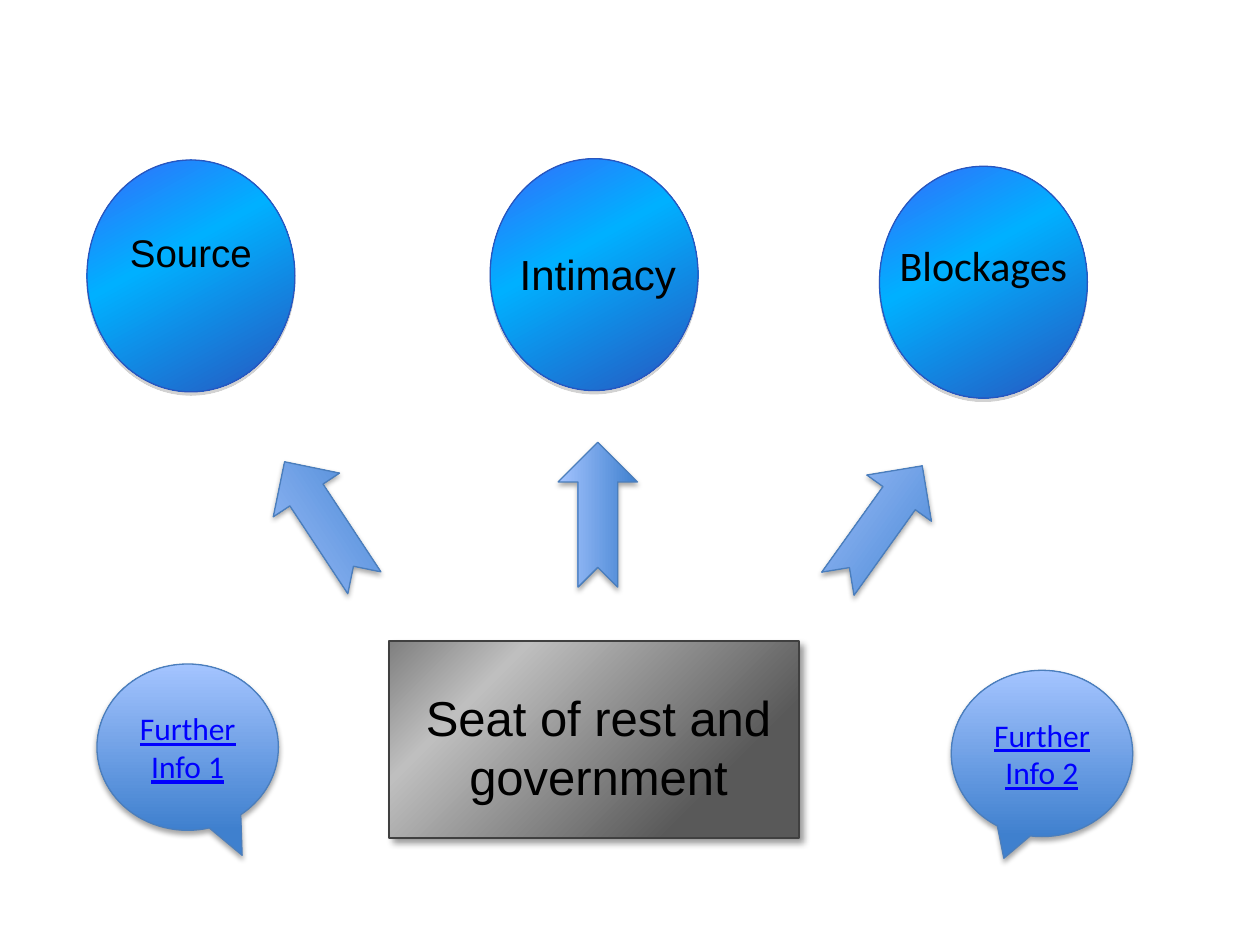
from dataclasses import dataclass

from lxml import etree
from pptx import Presentation
from pptx.dml.color import RGBColor
from pptx.enum.shapes import MSO_SHAPE
from pptx.enum.text import MSO_ANCHOR, PP_ALIGN
from pptx.oxml.ns import qn
from pptx.util import Inches, Pt

RECT = MSO_SHAPE.RECTANGLE
OVAL = MSO_SHAPE.OVAL
ARROW = MSO_SHAPE.NOTCHED_RIGHT_ARROW
BUBBLE = MSO_SHAPE.OVAL_CALLOUT
MIDDLE = MSO_ANCHOR.MIDDLE
CENTER = PP_ALIGN.CENTER


@dataclass(frozen=True)
class Look:
    stops: tuple
    angle: int
    edge: str
    weight: float
    shade: tuple


@dataclass(frozen=True)
class Theme:
    sans: str = "Arial"
    body: str = "Calibri"
    ink: str = "000000"
    link: str = "0000FF"
    title: int = 28
    large: int = 24
    label: int = 22
    small: int = 18
    seat: Look = Look(((22, "595959"), (77, "BFBFBF"), (100, "808080")),
                      225, "404040", 1, ("000000", 40, 4, 3, 45))
    disc: Look = Look(((0, "336FFA"), (2, "336FFA"), (40, "00B0FF"), (100, "2856BF")),
                      61, "2856BF", 0.75, ("808080", 35, 0, 1.8, 90))
    sky: Look = Look(((0, "3F80CE"), (100, "A4C4FF")),
                     270, "4B7EBC", 0.75, ("000000", 35, 3.1, 1.8, 90))


THEME = Theme()


def add_node(parent, tag, **attrs):
    return etree.SubElement(parent, qn(tag), {k: str(v) for k, v in attrs.items()})


def add_color(parent, color):
    return add_node(parent, "a:srgbClr", val=color)


def paint(shape, look):
    shape.fill.background()
    props = shape.fill._xPr
    blank = props.find(qn("a:noFill"))
    grad = add_node(props, "a:gradFill", rotWithShape=1)
    stops = add_node(grad, "a:gsLst")
    for pos, color in look.stops:
        add_color(add_node(stops, "a:gs", pos=pos * 1000), color)
    add_node(grad, "a:lin", ang=look.angle * 60000, scaled=0)
    props.replace(blank, grad)

    shape.line.color.rgb = RGBColor.from_string(look.edge)
    shape.line.width = Pt(look.weight)

    shape.shadow.inherit = False
    color, alpha, blur, dist, turn = look.shade
    shade = add_node(props.find(qn("a:effectLst")), "a:outerShdw",
                     blurRad=Pt(blur), dist=Pt(dist), dir=turn * 60000, rotWithShape=0)
    add_node(add_color(shade, color), "a:alpha", val=alpha * 1000)


def add_form(slide, kind, box, look):
    shape = slide.shapes.add_shape(kind, *map(Inches, box))
    paint(shape, look)
    return shape


def write(frame, text, size, face, color):
    para = frame.paragraphs[0]
    para.text = text
    para.alignment = CENTER
    para.font.size = Pt(size)
    para.font.name = face
    para.font.color.rgb = RGBColor.from_string(color)
    return para


def add_label(slide, box, text, size, face):
    frame = slide.shapes.add_textbox(*map(Inches, box)).text_frame
    frame.word_wrap = True
    frame.margin_left = frame.margin_right = 0
    frame.margin_top = frame.margin_bottom = 0
    write(frame, text, size, face, THEME.ink)


def add_seat(slide, box, text):
    left, top, width, height = box
    add_form(slide, RECT, box, THEME.seat)
    add_label(slide, (left + 0.07, top + 0.37, width - 0.07, 0.94),
              text, THEME.title, THEME.sans)


def add_disc(slide, box, text, shift, drop, size, face):
    left, top, width, height = box
    add_form(slide, OVAL, box, THEME.disc)
    wide = 1.83
    add_label(slide, (left + (width - wide) / 2 + shift, top + drop, wide, 0.4),
              text, size, face)


def add_arrow(slide, box, turn):
    add_form(slide, ARROW, box, THEME.sky).rotation = turn


def add_bubble(slide, box, text, tail):
    shape = add_form(slide, BUBBLE, box, THEME.sky)
    for i, value in enumerate(tail):
        shape.adjustments[i] = value
    frame = shape.text_frame
    frame.word_wrap = True
    frame.vertical_anchor = MIDDLE
    para = write(frame, text, THEME.small, THEME.body, THEME.link)
    para.font.underline = True


def main():
    deck = Presentation()
    deck.slide_width, deck.slide_height = Inches(10), Inches(7.5)
    slide = deck.slides.add_slide(deck.slide_layouts[6])

    add_seat(slide, (3.09, 5.09, 3.25, 1.56), "Seat of rest and government")

    discs = (
        (0.69, 1.27, "Source", 0, 0.55, THEME.label, THEME.sans),
        (3.89, 1.26, "Intimacy", 0.03, 0.71, THEME.large, THEME.sans),
        (6.98, 1.32, "Blockages", 0, 0.58, THEME.large, THEME.body),
    )
    for left, top, *rest in discs:
        add_disc(slide, (left, top, 1.65, 1.84), *rest)

    bubbles = (
        (0.77, 5.27, "Further Info 1", (0.3, 0.65)),
        (7.55, 5.32, "Further Info 2", (-0.21, 0.63)),
    )
    for left, top, text, tail in bubbles:
        add_bubble(slide, (left, top, 1.44, 1.32), text, tail)

    for left, top, turn in ((2, 3.83, 236.6), (4.17, 3.77, 270), (6.41, 3.85, 305.6)):
        add_arrow(slide, (left, top, 1.15, 0.63), turn)

    deck.save("out.pptx")


if __name__ == "__main__":
    main()
